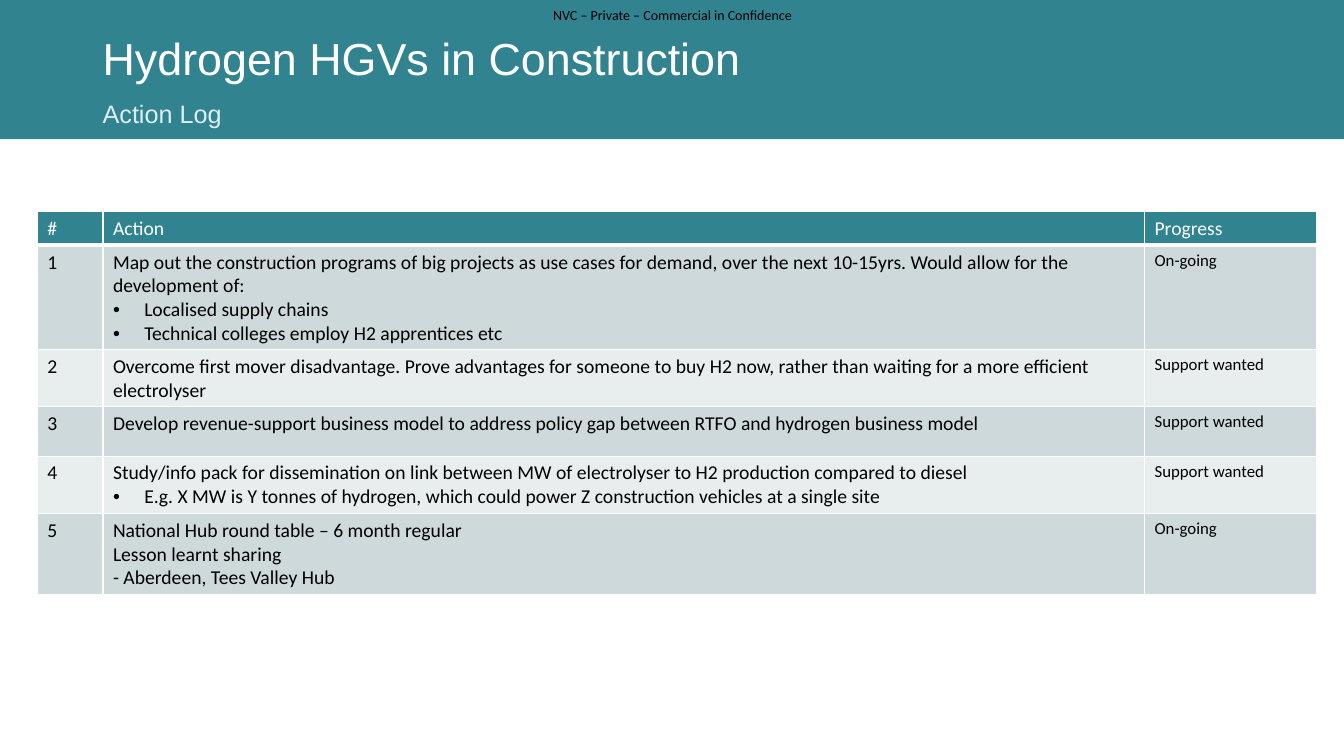
from lxml import etree
from pptx import Presentation
from pptx.dml.color import RGBColor
from pptx.enum import shapes, text
from pptx.oxml import ns
from pptx.util import Inches, Pt

WIDTH, HEIGHT = Inches(13.33), Inches(7.5)
COLORS = {
    "teal": "318390", "pale": "DCEFF6", "white": "FFFFFF", "black": "000000",
    "band_dark": "CED9DB", "band_light": "E8EDEE",
}
FORMATS = {
    "marking": {"name": "Calibri", "size": Pt(10), "color": "black"},
    "title": {"name": "Arial", "size": Pt(32), "color": "white"},
    "subtitle": {"name": "Arial", "size": Pt(18), "color": "pale"},
    "header": {"name": "Calibri", "size": Pt(14), "bold": False, "color": "white"},
    "body": {"name": "Calibri", "size": Pt(14), "color": "black"},
    "progress": {"name": "Calibri", "size": Pt(12), "color": "black"},
}
BULLET = "• "
INDENT = Inches(0.31)

# Table content: number is the row's position; lines starting with BULLET are listed
HEADINGS = ("#", "Action", "Progress")
ACTIONS = [
    (["Map out the construction programs of big projects as use cases for demand, "
      "over the next 10-15yrs. Would allow for the development of:",
      BULLET + "Localised supply chains",
      BULLET + "Technical colleges employ H2 apprentices etc"], "On-going"),
    (["Overcome first mover disadvantage. Prove advantages for someone to buy H2 now, "
      "rather than waiting for a more efficient electrolyser"], "Support wanted"),
    (["Develop revenue-support business model to address policy gap between RTFO "
      "and hydrogen business model"], "Support wanted"),
    (["Study/info pack for dissemination on link between MW of electrolyser to H2 "
      "production compared to diesel",
      BULLET + "E.g. X MW is Y tonnes of hydrogen, which could power Z construction "
      "vehicles at a single site"], "Support wanted"),
    (["National Hub round table – 6 month regular", "Lesson learnt sharing",
      "- Aberdeen, Tees Valley Hub"], "On-going"),
]
# Shares of the slide's width and height, in percent
COLUMN_SHARES = (4.88, 77.5, 12.83)
ROW_SHARES = (3.87, 13.47, 6.67, 6.53, 7.6, 9.33)


def across(share):
    return round(WIDTH * share / 100)


def down(share):
    return round(HEIGHT * share / 100)


def area(left, top, width, height):
    return across(left), down(top), across(width), down(height)


def paint(fill, color):
    fill.solid()
    fill.fore_color.rgb = RGBColor.from_string(COLORS[color])


def style(paragraph, role):
    for key, value in FORMATS[role].items():
        if key == "color":
            paragraph.font.color.rgb = RGBColor.from_string(COLORS[value])
        else:
            setattr(paragraph.font, key, value)


def add_bullet(paragraph):
    properties = paragraph._p.get_or_add_pPr()
    properties.set("marL", str(INDENT))
    properties.set("indent", str(-INDENT))
    etree.SubElement(properties, ns.qn("a:buFont"), typeface="Arial")
    etree.SubElement(properties, ns.qn("a:buChar"), char=BULLET.strip())


def write(frame, lines, role):
    for index, line in enumerate(lines):
        paragraph = frame.add_paragraph() if index else frame.paragraphs[0]
        if line.startswith(BULLET):
            add_bullet(paragraph)
        paragraph.text = line.removeprefix(BULLET)
        style(paragraph, role)


def add_band(slide, *place):
    shape = slide.shapes.add_shape(shapes.MSO_SHAPE.RECTANGLE, *area(*place))
    shape.shadow.inherit = False
    paint(shape.fill, "teal")
    shape.line.fill.background()


def add_label(slide, line, role, place, frame_format, paragraph_format):
    frame = slide.shapes.add_textbox(*area(*place)).text_frame
    write(frame, [line], role)
    for target, values in ((frame, frame_format), (frame.paragraphs[0], paragraph_format)):
        for key, value in values.items():
            setattr(target, key, value)


def add_borders(cell, bottom_width):
    properties = cell._tc.get_or_add_tcPr()
    widths = {"lnL": 1, "lnR": 1, "lnT": 1, "lnB": bottom_width}
    for position, (side, width) in enumerate(widths.items()):
        line = etree.Element(ns.qn("a:" + side), w=str(Pt(width)))
        fill = etree.SubElement(line, ns.qn("a:solidFill"))
        etree.SubElement(fill, ns.qn("a:srgbClr"), val=COLORS["white"])
        properties.insert(position, line)


def add_action_table(slide, left, top):
    rows = [[[heading] for heading in HEADINGS]]
    rows += [[[str(number)], lines, [progress]]
             for number, (lines, progress) in enumerate(ACTIONS, 1)]
    place = area(left, top, sum(COLUMN_SHARES), sum(ROW_SHARES))
    table = slide.shapes.add_table(len(rows), len(HEADINGS), *place).table
    for column, share in zip(table.columns, COLUMN_SHARES):
        column.width = across(share)
    for row, share in zip(table.rows, ROW_SHARES):
        row.height = down(share)
    for row_index, row in enumerate(rows):
        is_header = row_index == 0
        color = "teal" if is_header else ("band_light", "band_dark")[row_index % 2]
        roles = ["header"] * 3 if is_header else ["body", "body", "progress"]
        for column_index, (lines, role) in enumerate(zip(row, roles)):
            cell = table.cell(row_index, column_index)
            paint(cell.fill, color)
            add_borders(cell, 3 if is_header else 1)
            write(cell.text_frame, lines, role)


def main():
    presentation = Presentation()
    presentation.slide_width, presentation.slide_height = WIDTH, HEIGHT
    slide = presentation.slides.add_slide(presentation.slide_layouts[6])

    # Header band with confidentiality marking, title and subtitle
    add_band(slide, 0, 0, 100, 18.4)
    middle = {"word_wrap": True, "vertical_anchor": text.MSO_ANCHOR.MIDDLE}
    no_margins = dict.fromkeys(
        ("margin_left", "margin_top", "margin_right", "margin_bottom"), 0)
    add_label(slide, "NVC – Private – Commercial in Confidence", "marking",
              (39.68, 0, 20.7, 3.87), middle | no_margins,
              {"alignment": text.PP_ALIGN.CENTER})
    add_label(slide, "Hydrogen HGVs in Construction", "title",
              (6.9, 4.27, 75, 7.47), middle, {"line_spacing": 0.9})
    add_label(slide, "Action Log", "subtitle",
              (6.9, 12.8, 75, 4.13), {"word_wrap": True}, {"line_spacing": 0.9})

    # Action log
    add_action_table(slide, 2.78, 28)

    presentation.save("out.pptx")


if __name__ == "__main__":
    main()
